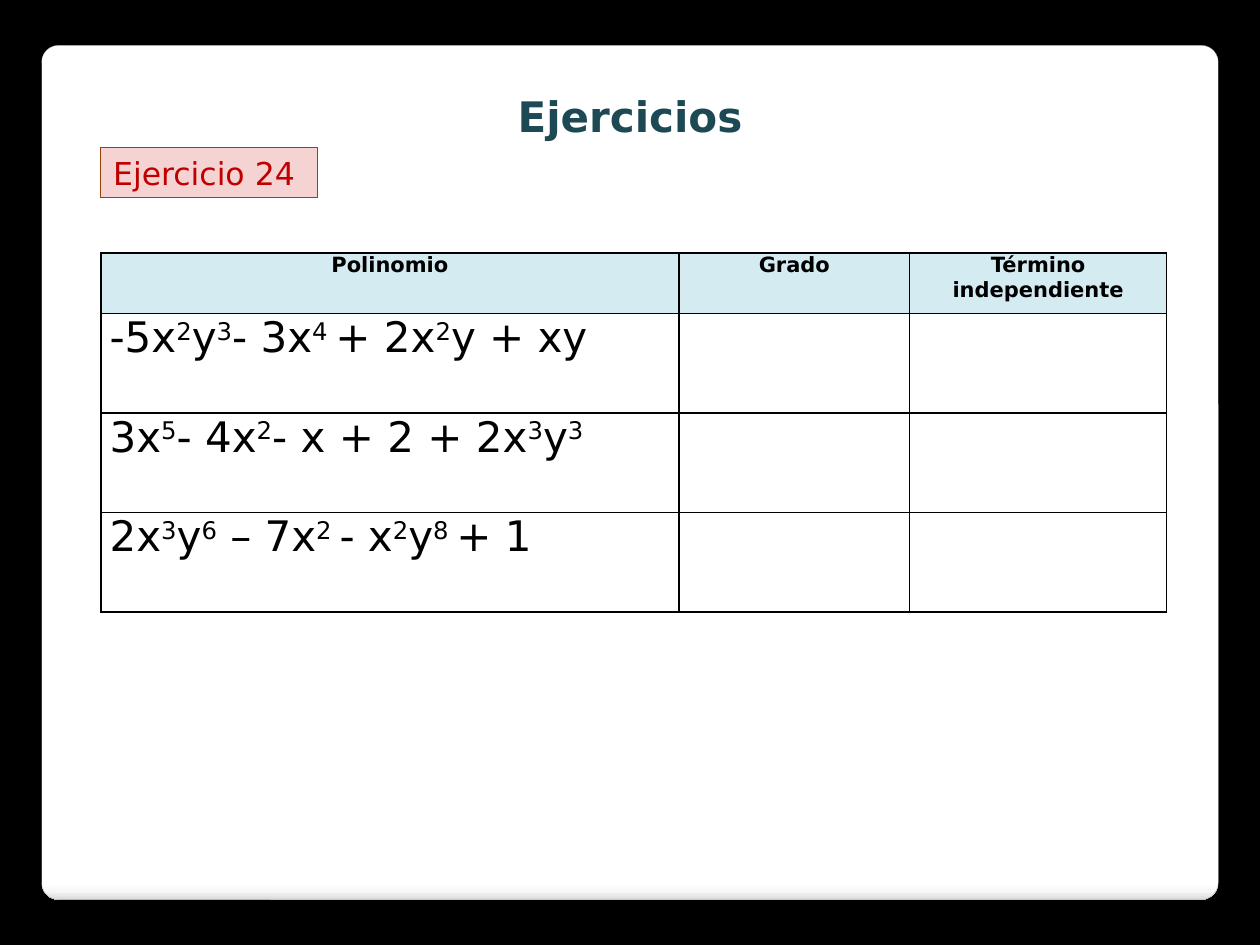
"""Build the exercise slide on the degree and constant term of polynomials."""
from lxml import etree
from pptx import Presentation
from pptx.dml.color import RGBColor
from pptx.enum.shapes import MSO_SHAPE
from pptx.enum.text import MSO_ANCHOR, PP_ALIGN
from pptx.oxml import parse_xml
from pptx.util import Inches, Pt

CENTER, LEFT = PP_ALIGN.CENTER, PP_ALIGN.LEFT
MIDDLE, TOP = MSO_ANCHOR.MIDDLE, MSO_ANCHOR.TOP
RECTANGLE, ROUNDED = MSO_SHAPE.RECTANGLE, MSO_SHAPE.ROUNDED_RECTANGLE
NAMESPACE = "http://schemas.openxmlformats.org/drawingml/2006/main"
FONT = "DejaVu Sans"

TITLE = "Ejercicios"
EXERCISE = "Ejercicio 24"
HEADERS = ["Polinomio", "Grado", "Término independiente"]
# Every second piece between bars is an exponent.
POLYNOMIALS = [
    "-5x|2|y|3|- 3x|4 |+ 2x|2|y + xy",
    "3x|5|- 4x|2|- x + 2 + 2x|3|y|3",
    "2x|3|y|6| – 7x|2 |- x|2|y|8 |+ 1",
]
GRADIENT = [(0, "FFFFFF"), (98, "FFFFFF"), (99, "F7F7F7"), (100, "DADADA")]
WIDTH, HEIGHT = 10, 7.5
MARGIN = 0.08 * WIDTH
COLUMNS = [4.59, 1.83, 2.04]
ROWS = [0.48] + [0.79] * len(POLYNOMIALS)


def color(value):
    return RGBColor.from_string(value)


def write(frame, text, size=24, ink="000000", bold=False, align=LEFT, after=0):
    frame.word_wrap = True
    paragraph = frame.paragraphs[0]
    paragraph.alignment = align
    paragraph.space_before, paragraph.space_after = Pt(0), Pt(after)
    for index, piece in enumerate(text.split("|")):
        run = paragraph.add_run()
        run.text = piece
        run.font.name, run.font.size, run.font.bold = FONT, Pt(size), bold
        run.font.color.rgb = color(ink)
        if index % 2:
            run.font._element.set("baseline", "30000")


def add_panel(slide):
    left, top = 0.33, 0.36
    panel = slide.shapes.add_shape(ROUNDED, Inches(left), Inches(top),
                                   Inches(WIDTH - 2 * left), Inches(HEIGHT - 2 * top))
    panel.adjustments[0] = 0.02
    panel.line.color.rgb, panel.line.width = color("A4A4A4"), Pt(0.16)
    stops = "".join(f'<a:gs pos="{place * 1000}"><a:srgbClr val="{value}"/></a:gs>'
                    for place, value in GRADIENT)
    properties = panel._element.spPr
    properties.insert(2, parse_xml(
        f'<a:gradFill xmlns:a="{NAMESPACE}"><a:gsLst>{stops}</a:gsLst>'
        '<a:lin ang="5400000" scaled="0"/></a:gradFill>'))
    properties.append(parse_xml(
        f'<a:effectLst xmlns:a="{NAMESPACE}"><a:outerShdw blurRad="76200" dist="50800" '
        'dir="5400000"><a:srgbClr val="000000"><a:alpha val="25000"/></a:srgbClr>'
        '</a:outerShdw></a:effectLst>'))
    slide.shapes._spTree.insert(2, panel._element)


def add_title(slide):
    title = slide.shapes.title
    title.left, title.top = Inches(0.39), Inches(0.67)
    title.width, title.height = Inches(WIDTH - 2 * 0.39), Inches(0.5)
    title.text_frame.vertical_anchor = TOP
    write(title.text_frame, TITLE, ink="1C4954", bold=True, align=CENTER)


def add_label(slide):
    label = slide.shapes.add_shape(RECTANGLE, Inches(MARGIN), Inches(1.17),
                                   Inches(1.72), Inches(0.4))
    label.shadow.inherit = False
    label.fill.solid()
    label.fill.fore_color.rgb = color("F5D3D3")
    label.line.color.rgb, label.line.width = color("964305"), Pt(0.75)
    label.text_frame.vertical_anchor = MIDDLE
    write(label.text_frame, EXERCISE, size=18, ink="C00000")


def add_borders(cell):
    properties = cell._tc.get_or_add_tcPr()
    for index, side in enumerate(("lnL", "lnR", "lnT", "lnB")):
        line = etree.Element(f"{{{NAMESPACE}}}{side}", w=str(Pt(1)))
        fill = etree.SubElement(line, f"{{{NAMESPACE}}}solidFill")
        etree.SubElement(fill, f"{{{NAMESPACE}}}srgbClr", val="000000")
        properties.insert(index, line)


def add_exercise_table(slide):
    table = slide.shapes.add_table(len(ROWS), len(COLUMNS), Inches(MARGIN), Inches(2.01),
                                   Inches(sum(COLUMNS)), Inches(sum(ROWS))).table
    table.first_row = table.horz_banding = False
    for column, width in zip(table.columns, COLUMNS):
        column.width = Inches(width)
    for row, height in zip(table.rows, ROWS):
        row.height = Inches(height)
    for cell in table.iter_cells():
        cell.margin_left = cell.margin_right = Inches(0.07)
        cell.margin_top = cell.margin_bottom = 0
        cell.fill.background()
        add_borders(cell)
    for index, header in enumerate(HEADERS):
        cell = table.cell(0, index)
        cell.fill.solid()
        cell.fill.fore_color.rgb = color("D4EBF1")
        write(cell.text_frame, header, size=12, bold=True, align=CENTER)
    for index, polynomial in enumerate(POLYNOMIALS, start=1):
        write(table.cell(index, 0).text_frame, polynomial, after=6)


def main():
    presentation = Presentation()
    presentation.slide_width, presentation.slide_height = Inches(WIDTH), Inches(HEIGHT)
    slide = presentation.slides.add_slide(presentation.slide_layouts[5])
    slide.background.fill.solid()
    slide.background.fill.fore_color.rgb = color("000000")
    add_panel(slide)
    add_title(slide)
    add_label(slide)
    add_exercise_table(slide)
    presentation.save("out.pptx")


if __name__ == "__main__":
    main()
